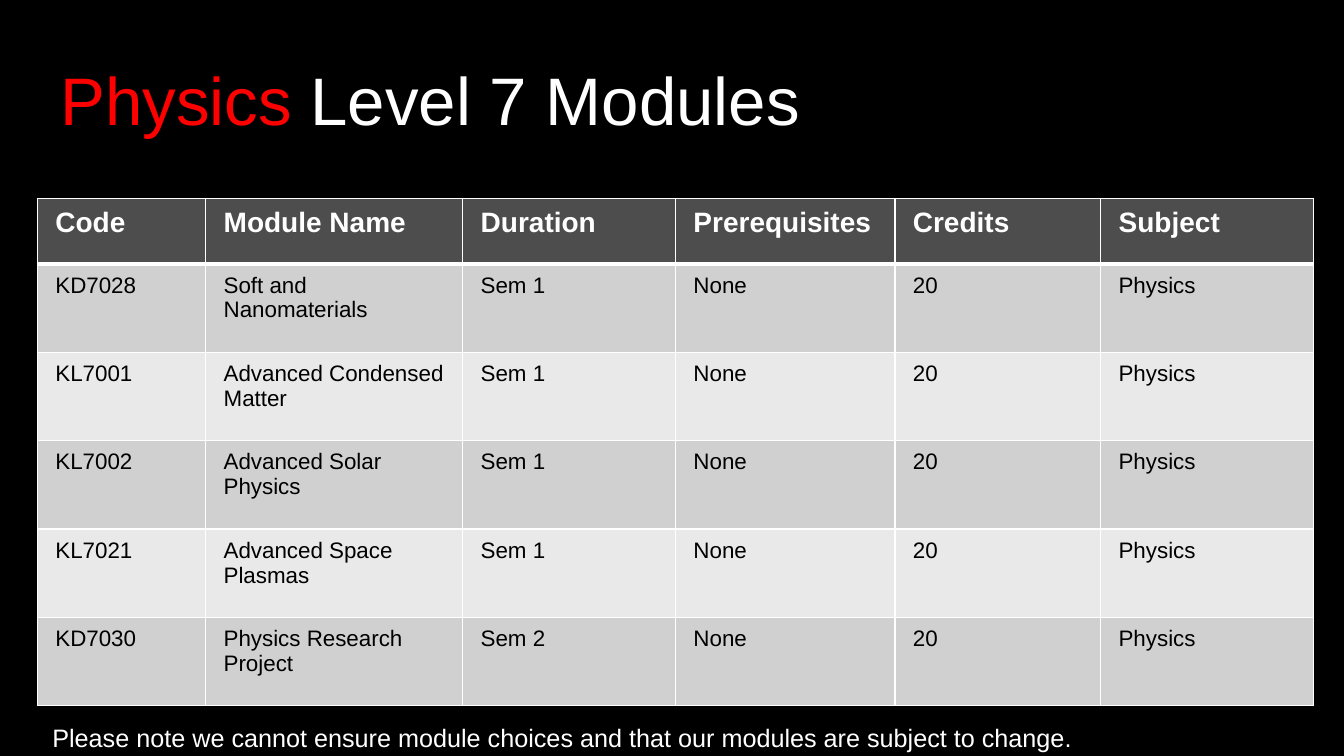
from lxml.etree import SubElement
from pptx import Presentation
from pptx.dml.color import RGBColor
from pptx.enum.text import MSO_ANCHOR, MSO_AUTO_SIZE, PP_ALIGN
from pptx.oxml.ns import qn
from pptx.util import Pt

BLACK = RGBColor(0x00, 0x00, 0x00)
WHITE = RGBColor(0xFF, 0xFF, 0xFF)
RED = RGBColor(0xFF, 0x00, 0x00)
HEADER_GREY = RGBColor(0x4D, 0x4D, 0x4D)
BAND_GREYS = [RGBColor(0xD0, 0xD0, 0xD0), RGBColor(0xE9, 0xE9, 0xE9)]

HEADINGS = ["Code", "Module Name", "Duration", "Prerequisites", "Credits", "Subject"]
MODULES = [
    ("KD7028", "Soft and Nanomaterials", "Sem 1"),
    ("KL7001", "Advanced Condensed Matter", "Sem 1"),
    ("KL7002", "Advanced Solar Physics", "Sem 1"),
    ("KL7021", "Advanced Space Plasmas", "Sem 1"),
    ("KD7030", "Physics Research Project", "Sem 2"),
]
SHARED_VALUES = ("None", "20", "Physics")
COLUMN_WIDTHS = [120.2, 183.6, 152, 156.7, 147, 152]
HEADER_HEIGHT, MODULE_HEIGHT = 46.8, 63.1


class ModuleSlide:
    font = "Arial"

    def __init__(self, deck):
        self.slide = deck.slides.add_slide(deck.slide_layouts[5])
        background = self.slide.background.fill
        background.solid()
        background.fore_color.rgb = BLACK

    def add_run(self, paragraph, text, size, color, bold=False):
        run = paragraph.add_run()
        run.text = text
        run.font.name = self.font
        run.font.size = Pt(size)
        run.font.bold = bold
        run.font.color.rgb = color

    def add_title(self, left, top, width, height, parts):
        title = self.slide.shapes.title
        title.left, title.top = Pt(left), Pt(top)
        title.width, title.height = Pt(width), Pt(height)
        frame = title.text_frame
        frame.word_wrap = True
        frame.auto_size = MSO_AUTO_SIZE.NONE
        frame.vertical_anchor = MSO_ANCHOR.MIDDLE
        heading = frame.paragraphs[0]
        heading.alignment = PP_ALIGN.LEFT
        heading.line_spacing = 0.9
        for text, color in parts:
            self.add_run(heading, text, 48, color)

    def add_note(self, left, top, width, height, text):
        note = self.slide.shapes.add_textbox(Pt(left), Pt(top), Pt(width), Pt(height))
        frame = note.text_frame
        frame.word_wrap = True
        frame.auto_size = MSO_AUTO_SIZE.SHAPE_TO_FIT_TEXT
        self.add_run(frame.paragraphs[0], text, 18, WHITE)

    def add_borders(self, cell, top, bottom):
        properties = cell._tc.get_or_add_tcPr()
        for side, weight in (("L", 1), ("R", 1), ("T", top), ("B", bottom)):
            line = SubElement(properties, qn(f"a:ln{side}"), w=str(Pt(weight)))
            color = SubElement(SubElement(line, qn("a:solidFill")), qn("a:srgbClr"))
            color.set("val", str(WHITE))

    def fill_cell(self, cell, text, row):
        is_header = row == 0
        self.add_borders(cell, top=3 if row == 1 else 1, bottom=3 if is_header else 1)
        cell.fill.solid()
        cell.fill.fore_color.rgb = HEADER_GREY if is_header else BAND_GREYS[(row - 1) % 2]
        cell.margin_left = cell.margin_right = Pt(12.8)
        cell.margin_top = cell.margin_bottom = Pt(6.4)
        self.add_run(cell.text_frame.paragraphs[0], text, 20 if is_header else 16,
                     WHITE if is_header else BLACK, bold=is_header)

    def add_table(self, left, top, rows, column_widths, row_heights):
        table = self.slide.shapes.add_table(
            len(rows), len(column_widths), Pt(left), Pt(top),
            Pt(sum(column_widths)), Pt(sum(row_heights))).table
        for column, width in zip(table.columns, column_widths):
            column.width = Pt(width)
        for row, height in zip(table.rows, row_heights):
            row.height = Pt(height)
        for row, values in enumerate(rows):
            for column, text in enumerate(values):
                self.fill_cell(table.cell(row, column), text, row)


def main():
    deck = Presentation()
    deck.slide_width, deck.slide_height = Pt(960), Pt(540)
    page = ModuleSlide(deck)
    page.add_title(36, 28.8, 731, 90, [("Physics", RED), (" Level 7 Modules", WHITE)])
    page.add_table(26.8, 141.8,
                   [HEADINGS] + [module + SHARED_VALUES for module in MODULES],
                   COLUMN_WIDTHS, [HEADER_HEIGHT] + [MODULE_HEIGHT] * len(MODULES))
    page.add_note(30.3, 512.6, 880.5, 29,
                  "Please note we cannot ensure module choices and that our modules "
                  "are subject to change.")
    deck.save("out.pptx")


if __name__ == "__main__":
    main()
